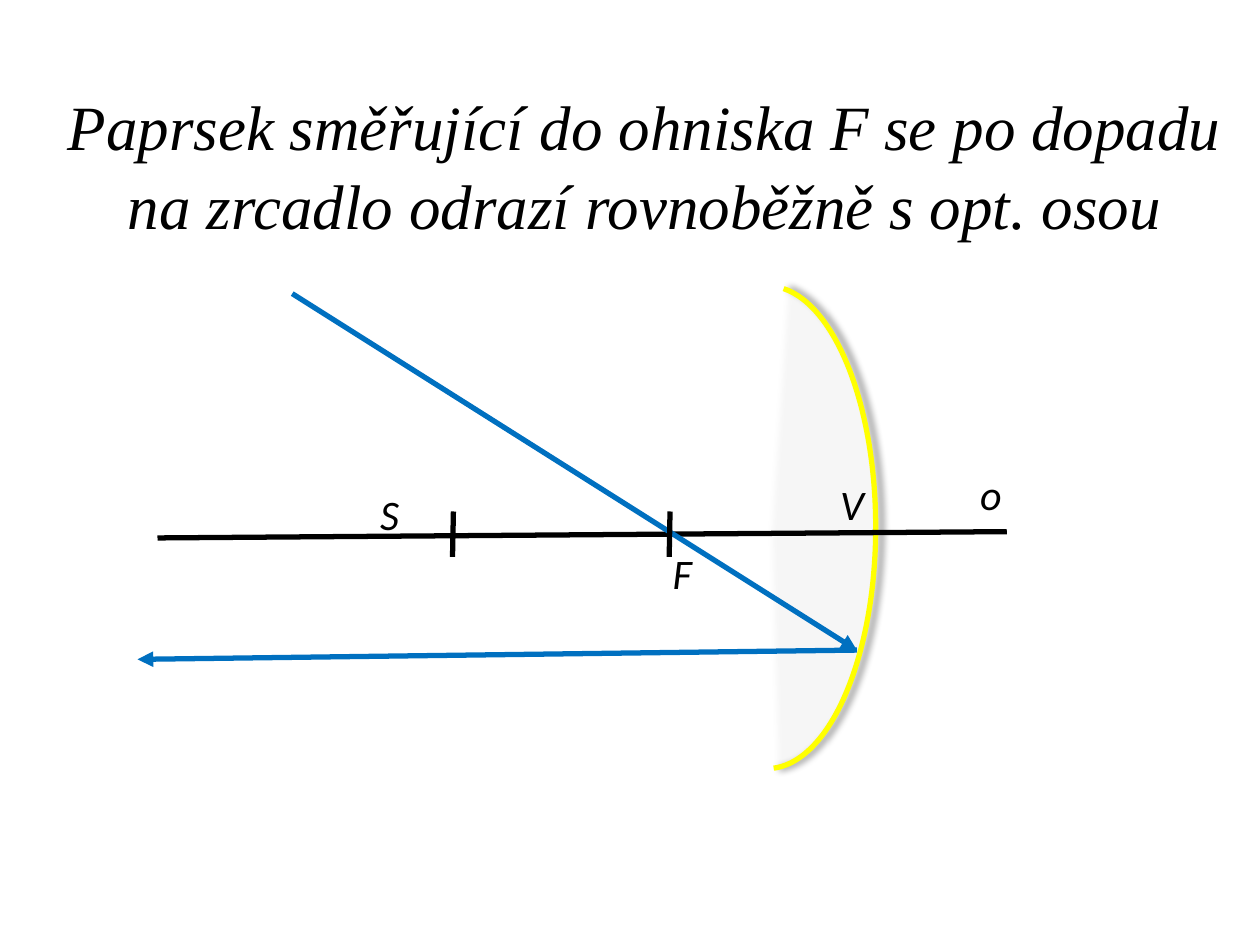
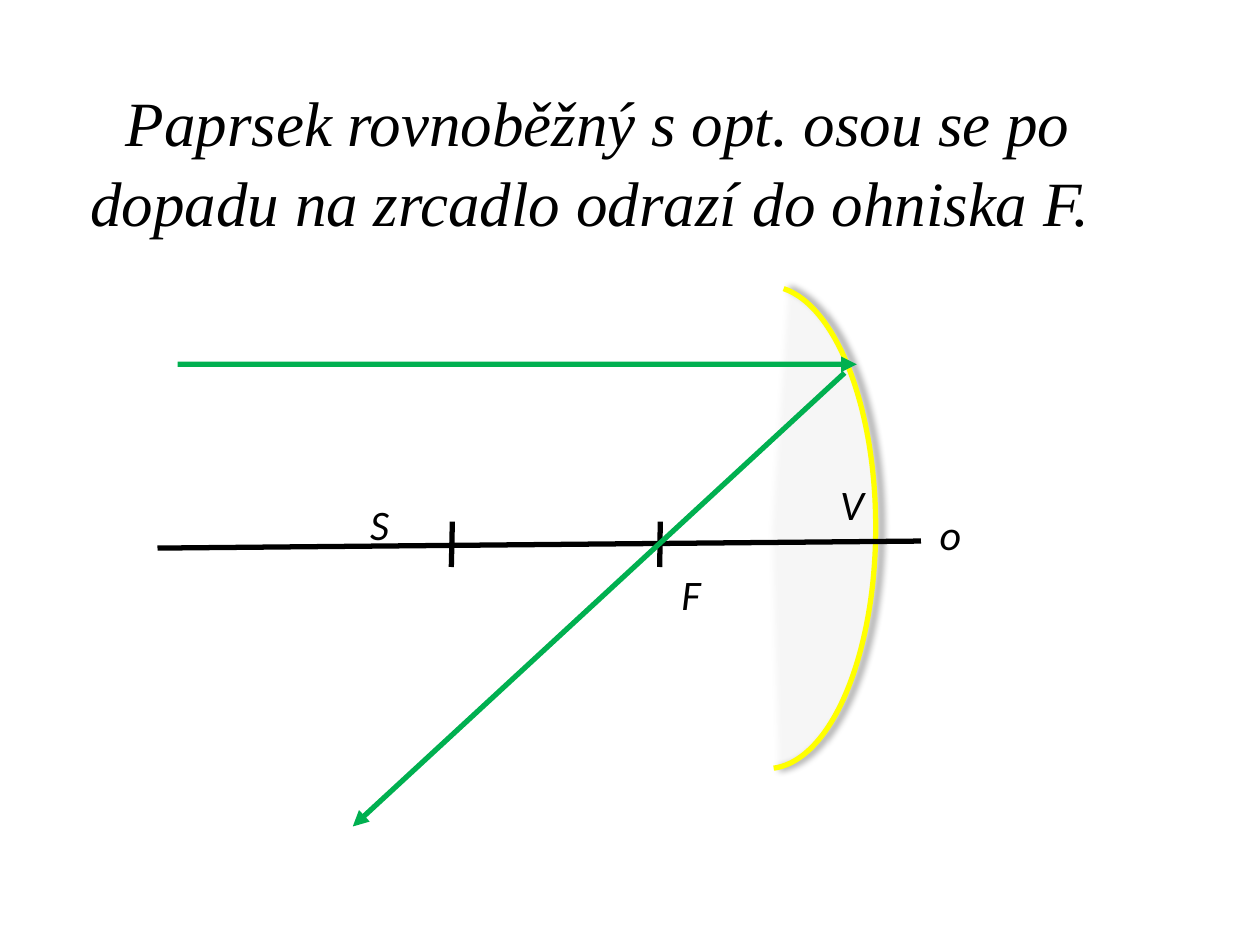
"""Build two slides showing how rays reflect from a curved mirror."""
from collections import namedtuple

from lxml import etree
from pptx import Presentation
from pptx.dml.color import RGBColor as RGB
from pptx.enum.shapes import MSO_CONNECTOR as CONN, MSO_SHAPE as SHAPE
from pptx.enum.text import MSO_ANCHOR as ANCHOR, MSO_AUTO_SIZE as AUTO, PP_ALIGN as ALIGN
from pptx.oxml import parse_xml
from pptx.oxml.ns import nsdecls, qn
from pptx.util import Pt

Theme = namedtuple("Theme", "ink paper mirror blue green title_font label_font title_size label_size line")
theme = Theme(
    ink=RGB(0, 0, 0), paper=RGB(255, 255, 255), mirror=RGB(255, 255, 0),
    blue=RGB(0, 0x70, 0xC0), green=RGB(0, 0xB0, 0x50),
    title_font="Times New Roman", label_font="Calibri",
    title_size=Pt(36), label_size=Pt(24), line=Pt(3),
)

MIRROR_BOX = (376.6, 163.4, 123.8, 275.8)
MIRROR_ANGLES = (273.9, 88.5)
MIRROR_SHADOW = (
    f'<a:effectLst {nsdecls("a")}><a:outerShdw blurRad="{Pt(4)}" dist="{Pt(3)}" dir="0">'
    '<a:srgbClr val="000000"><a:alpha val="40000"/></a:srgbClr></a:outerShdw></a:effectLst>'
)

slides = [
    {
        "title": "Paprsek směřující do ohniska F se po dopadu na zrcadlo odrazí rovnoběžně s opt. osou",
        "title_box": (16.6, 35.3, 703.4, 115.9),
        "lines": [
            (90, 307.4, 575.3, 303.8, theme.ink, False),
            (489.6, 371.5, 78.6, 376.8, theme.blue, True),
            (167, 167.8, 489.6, 371.5, theme.blue, True),
            (382.9, 292.3, 382.4, 318.2, theme.ink, False),
            (259.1, 292.3, 258.6, 318.2, theme.ink, False),
        ],
        "labels": [("o", 553, 264.2, 26.6), ("F", 377.3, 309.6, 22.3),
                   ("S", 210.2, 275.8, 28), ("V", 473, 270, 28)],
    },
    {
        "title": "Paprsek rovnoběžný s opt. osou se po dopadu na zrcadlo odrazí do ohniska F. ",
        "title_box": (18.7, 33.1, 645.8, 115.9),
        "lines": [
            (90, 313.2, 526.3, 309.2, theme.ink, False),
            (377.3, 298.1, 377, 324, theme.ink, False),
            (258.5, 298.1, 257.9, 324, theme.ink, False),
            (101.5, 208.1, 489.6, 208.2, theme.green, True),
            (482.6, 213.1, 201.6, 472.3, theme.green, True),
        ],
        "labels": [("o", 529.9, 287.3, 26.6), ("F", 382.3, 321.1, 22.3),
                   ("S", 204.5, 281.5, 28), ("V", 473, 270, 28)],
    },
]


def add_run(p, text, font, size):
    r = p.add_run()
    r.text = text
    r.font.name, r.font.size = font, size
    r.font.italic = True
    r.font.color.rgb = theme.ink


prs = Presentation()
prs.slide_width, prs.slide_height = Pt(720), Pt(540)

for content in slides:
    s = prs.slides.add_slide(prs.slide_layouts[5])
    s.background.fill.solid()
    s.background.fill.fore_color.rgb = theme.paper

    title = s.shapes.title
    title.left, title.top, title.width, title.height = map(Pt, content["title_box"])
    tf = title.text_frame
    tf.word_wrap = True
    tf.auto_size = AUTO.NONE
    tf.vertical_anchor = ANCHOR.MIDDLE
    p = tf.paragraphs[0]
    p.alignment = ALIGN.CENTER
    p.line_spacing = 1.05
    add_run(p, content["title"], theme.title_font, theme.title_size)

    mirror = s.shapes.add_shape(SHAPE.ARC, *map(Pt, MIRROR_BOX))
    for i, angle in enumerate(MIRROR_ANGLES):
        mirror.adjustments[i] = angle * 0.6
    mirror.fill.solid()
    mirror.fill.fore_color.rgb = theme.paper
    color = mirror.fill._xPr.find(qn("a:solidFill"))[0]
    etree.SubElement(color, qn("a:alpha"), val="10000")
    mirror.line.color.rgb = theme.mirror
    mirror.line.width = theme.line
    mirror._element.spPr.append(parse_xml(MIRROR_SHADOW))

    for *ends, color, is_ray in content["lines"]:
        line = s.shapes.add_connector(CONN.STRAIGHT, *map(Pt, ends))
        line.line.color.rgb = color
        line.line.width = theme.line
        if is_ray:
            etree.SubElement(line.line._get_or_add_ln(), qn("a:tailEnd"), type="triangle")
        etree.SubElement(line._element.spPr, qn("a:effectLst"))

    for text, left, top, width in content["labels"]:
        label = s.shapes.add_textbox(Pt(left), Pt(top), Pt(width), Pt(36))
        tf = label.text_frame
        tf.word_wrap = True
        tf.auto_size = AUTO.SHAPE_TO_FIT_TEXT
        add_run(tf.paragraphs[0], text, theme.label_font, theme.label_size)

prs.save("out.pptx")
